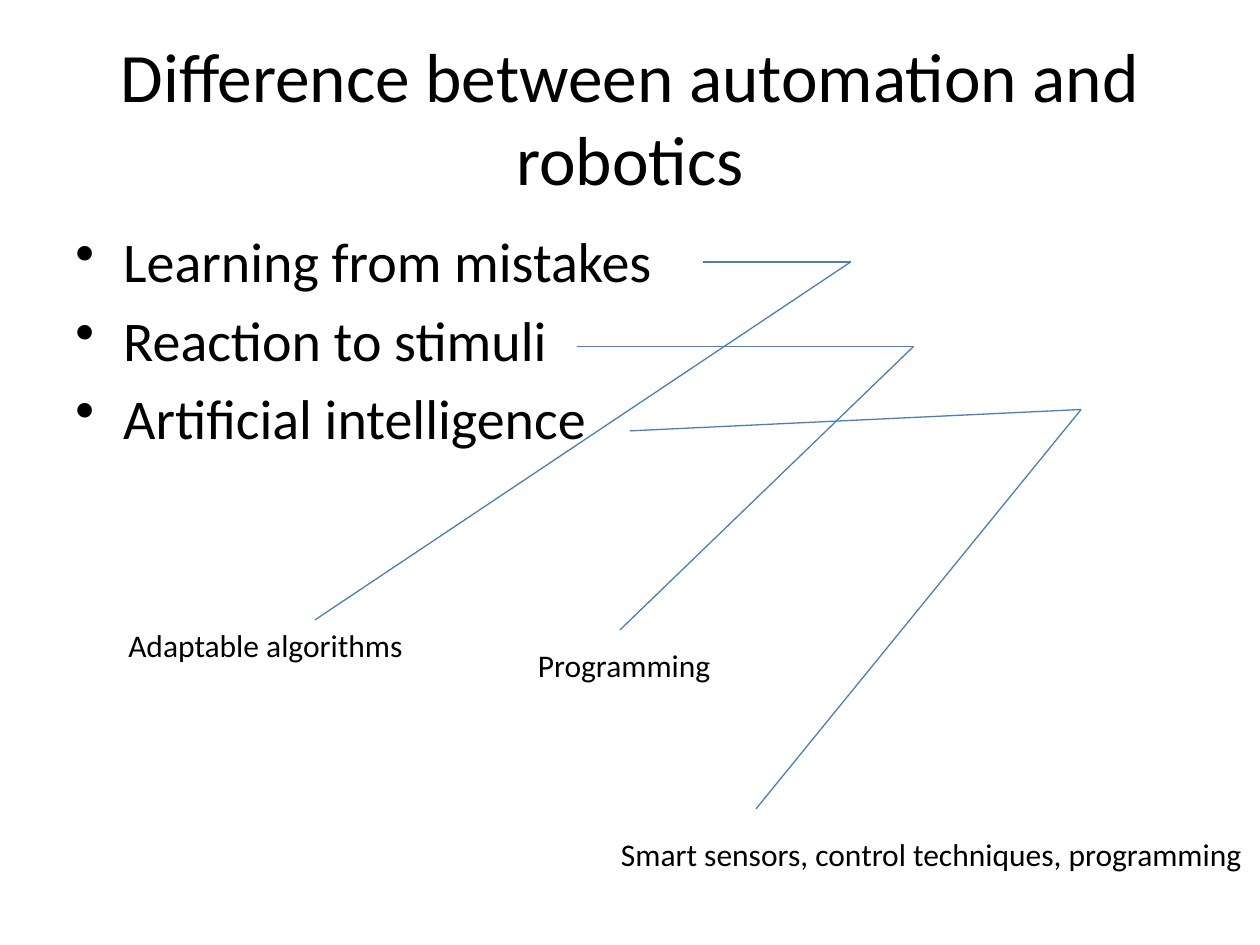
from dataclasses import dataclass

import pptx
import pptx.dml.color
import pptx.enum.shapes
import pptx.enum.text
import pptx.oxml
import pptx.oxml.ns
import pptx.util
from lxml import etree

Inches = pptx.util.Inches
Pt = pptx.util.Pt
Anchor = pptx.enum.text.MSO_ANCHOR
Align = pptx.enum.text.PP_ALIGN
AutoSize = pptx.enum.text.MSO_AUTO_SIZE


@dataclass(frozen=True)
class Theme:
    font: str = "Calibri"
    background: str = "FFFFFF"
    text: str = "000000"
    line: str = "4B7EBC"
    title_size: float = 39.6
    bullet_size: float = 32
    label_size: float = 18
    line_width: float = 0.75
    bullet_gap: float = 6.4
    bullet_indent: float = 0.38


class PageBuilder:
    def __init__(self, page, theme):
        self.page = page
        self.theme = theme
        fill = page.background.fill
        fill.solid()
        fill.fore_color.rgb = self.color(theme.background)

    def color(self, code):
        return pptx.dml.color.RGBColor.from_string(code)

    def add_span(self, para, text, size):
        span = para.add_run()
        span.text = text
        span.font.name = self.theme.font
        span.font.size = Pt(size)
        span.font.color.rgb = self.color(self.theme.text)

    def add_title(self, text, left, top, width, height):
        box = self.page.shapes.title
        box.left, box.top = Inches(left), Inches(top)
        box.width, box.height = Inches(width), Inches(height)
        frame = box.text_frame
        frame.auto_size = AutoSize.NONE
        frame.vertical_anchor = Anchor.MIDDLE
        para = frame.paragraphs[0]
        para.alignment = Align.CENTER
        self.add_span(para, text, self.theme.title_size)

    def add_text_box(self, left, top, width, height):
        return self.page.shapes.add_textbox(
            Inches(left), Inches(top), Inches(width), Inches(height)
        )

    def add_bullets(self, items, left, top, width, height):
        frame = self.add_text_box(left, top, width, height).text_frame
        frame.word_wrap = True
        indent = Inches(self.theme.bullet_indent)
        for index, item in enumerate(items):
            para = frame.add_paragraph() if index else frame.paragraphs[0]
            para.space_before = Pt(self.theme.bullet_gap)
            properties = para._p.get_or_add_pPr()
            properties.set("marL", str(indent))
            properties.set("indent", str(-indent))
            bullet = etree.SubElement(properties, pptx.oxml.ns.qn("a:buChar"))
            bullet.set("char", "•")
            self.add_span(para, item, self.theme.bullet_size)

    def add_label(self, text, left, top, width, height=0.4):
        frame = self.add_text_box(left, top, width, height).text_frame
        frame.word_wrap = False
        frame.auto_size = AutoSize.SHAPE_TO_FIT_TEXT
        self.add_span(frame.paragraphs[0], text, self.theme.label_size)

    def add_line(self, start, end):
        line = self.page.shapes.add_connector(
            pptx.enum.shapes.MSO_CONNECTOR.STRAIGHT,
            *(Inches(value) for value in (*start, *end)),
        )
        line.line.color.rgb = self.color(self.theme.line)
        line.line.width = Pt(self.theme.line_width)
        etree.SubElement(line._element.spPr, pptx.oxml.ns.qn("a:effectLst"))

    def add_link(self, points):
        for start, end in zip(points, points[1:]):
            self.add_line(start, end)


def main():
    deck = pptx.Presentation()
    deck.slide_width, deck.slide_height = Inches(10), Inches(7.5)
    builder = PageBuilder(deck.slides.add_slide(deck.slide_layouts[5]), Theme())

    builder.add_title("Difference between automation and robotics", 0.5, 0.3, 9, 1.25)
    builder.add_bullets(
        ["Learning from mistakes", "Reaction to stimuli", "Artificial intelligence"],
        0.5, 1.75, 9, 4.95,
    )

    answers = [
        ("Adaptable algorithms", (0.92, 4.92, 2.4),
         [(5.58, 2.08), (6.75, 2.08), (2.5, 4.92)]),
        ("Programming", (4.17, 5.08, 1.58),
         [(4.58, 2.75), (7.25, 2.75), (4.92, 5)]),
        ("Smart sensors, control techniques, programming", (4.83, 6.58, 5.18),
         [(5, 3.42), (8.58, 3.25), (6, 6.42)]),
    ]
    for text, place, points in answers:
        builder.add_link(points)
        builder.add_label(text, *place)

    deck.save("out.pptx")


if __name__ == "__main__":
    main()
